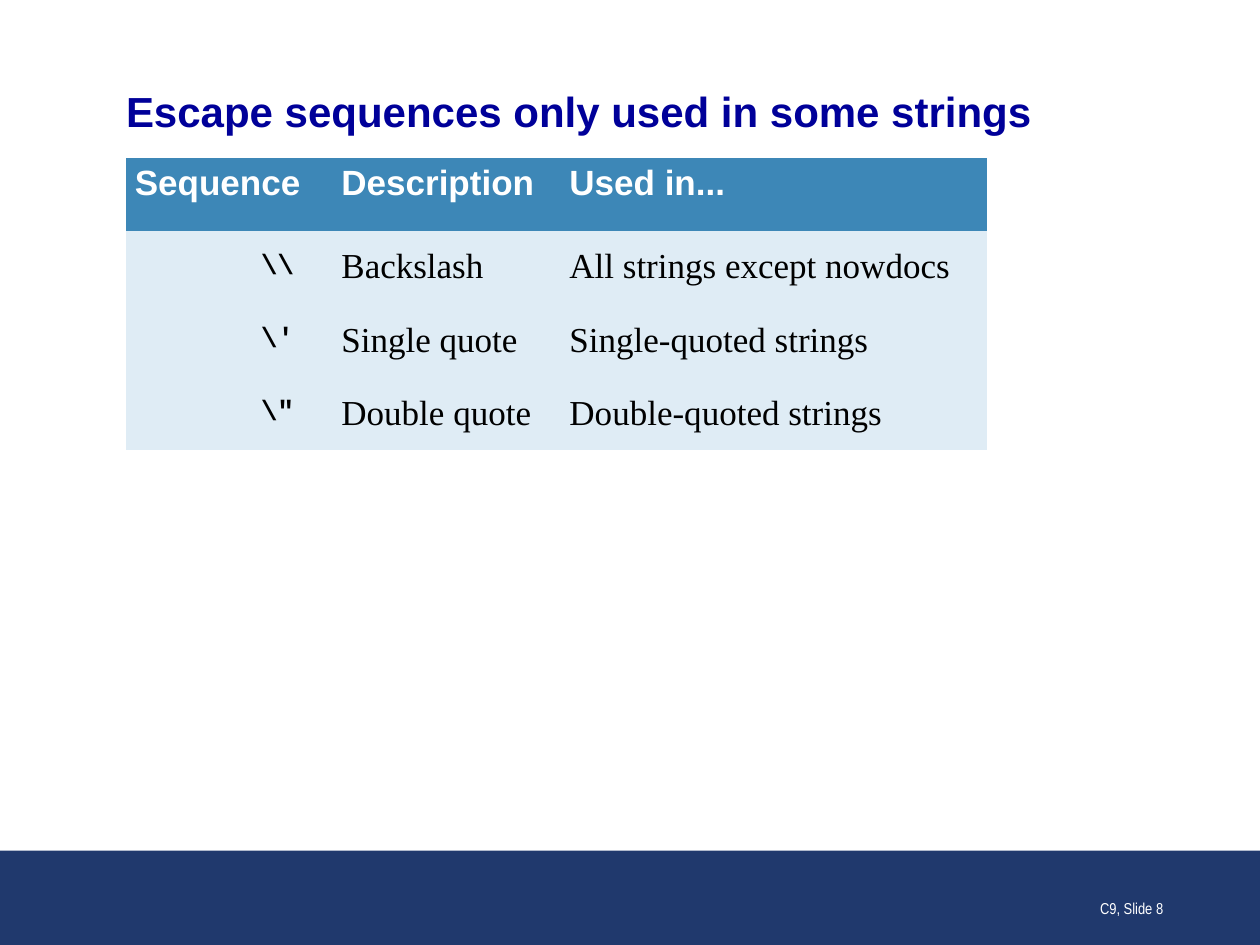
import pptx
import pptx.util
import pptx.dml.color
import pptx.enum.shapes
import pptx.enum.text
from pptx.dml.color import RGBColor
from pptx.util import Inches, Pt

TITLE = "Escape sequences only used in some strings"
HEADINGS = ("Sequence", "Description", "Used in...")
ESCAPES = [
    (r"\\", "Backslash", "All strings except nowdocs"),
    (r"\'", "Single quote", "Single-quoted strings"),
    (r"\"", "Double quote", "Double-quoted strings"),
]
FOOTER = "C9, Slide 8"

COLUMN_WIDTHS = (1.64, 1.81, 3.38)
ROW_HEIGHT = 0.58
SIDE_MARGIN = 0.07
CODE_INDENT = 1

NAVY = RGBColor(0x20, 0x39, 0x6D)
TITLE_BLUE = RGBColor(0x00, 0x00, 0x99)
HEADER_BLUE = RGBColor(0x3D, 0x87, 0xB7)
PALE_BLUE = RGBColor(0xDF, 0xEC, 0xF5)
WHITE = RGBColor(0xFF, 0xFF, 0xFF)
BLACK = RGBColor(0x00, 0x00, 0x00)

HEADER_STYLE = ("Arial", 20, WHITE, True)
CODE_STYLE = ("Courier New", 16, BLACK, True)
BODY_STYLE = ("Times New Roman", 20, BLACK, False)

ANCHOR = pptx.enum.text.MSO_ANCHOR
ALIGN = pptx.enum.text.PP_ALIGN


def add_span(para, text, style):
    span = para.add_run()
    span.text = text
    span.font.name, size, color, span.font.bold = style
    span.font.size = Pt(size)
    span.font.color.rgb = color


def add_footer(slide):
    band = slide.shapes.add_shape(
        pptx.enum.shapes.MSO_SHAPE.RECTANGLE,
        Inches(0), Inches(6.75), Inches(10), Inches(0.75))
    band.shadow.inherit = False
    band.fill.solid()
    band.fill.fore_color.rgb = NAVY
    band.line.fill.background()

    box = slide.shapes.add_textbox(
        Inches(7.25), Inches(6.83), Inches(2.08), Inches(0.5))
    frame = box.text_frame
    frame.word_wrap = True
    frame.vertical_anchor = ANCHOR.BOTTOM
    para = frame.paragraphs[0]
    para.alignment = ALIGN.RIGHT
    add_span(para, FOOTER, ("Arial Narrow", 9, WHITE, False))


def add_title(slide):
    title = slide.shapes.title
    title.left, title.top = Inches(1), Inches(0.68)
    title.width, title.height = Inches(8), Inches(0.4)
    frame = title.text_frame
    frame.word_wrap = True
    frame.auto_size = pptx.enum.text.MSO_AUTO_SIZE.NONE
    frame.vertical_anchor = ANCHOR.MIDDLE
    frame.margin_left = frame.margin_right = 0
    frame.margin_top = frame.margin_bottom = 0
    para = frame.paragraphs[0]
    para.alignment = ALIGN.LEFT
    add_span(para, TITLE, ("Arial", 24, TITLE_BLUE, True))


def add_escape_table(slide):
    rows = [HEADINGS] + ESCAPES
    table = slide.shapes.add_table(
        len(rows), len(HEADINGS), Inches(1), Inches(1.25),
        Inches(sum(COLUMN_WIDTHS)), Inches(ROW_HEIGHT * len(rows))).table
    for column, width in zip(table.columns, COLUMN_WIDTHS):
        column.width = Inches(width)
    for row_index, texts in enumerate(rows):
        table.rows[row_index].height = Inches(ROW_HEIGHT)
        is_header = row_index == 0
        for column_index, text in enumerate(texts):
            is_code = not is_header and column_index == 0
            cell = table.cell(row_index, column_index)
            cell.fill.solid()
            cell.fill.fore_color.rgb = HEADER_BLUE if is_header else PALE_BLUE
            cell.vertical_anchor = ANCHOR.TOP if is_header else ANCHOR.MIDDLE
            indent = CODE_INDENT if is_code else 0
            cell.margin_left = Inches(SIDE_MARGIN + indent)
            cell.margin_right = Inches(SIDE_MARGIN)
            cell.margin_top = cell.margin_bottom = Inches(0.05)
            style = (HEADER_STYLE if is_header
                     else CODE_STYLE if is_code else BODY_STYLE)
            add_span(cell.text_frame.paragraphs[0], text, style)
    # Turn off the style's banding and header rule; every cell has its own fill.
    table.first_row = False
    table.horz_banding = False
    style_id = table._tbl.tblPr.find(pptx.oxml.ns.qn("a:tableStyleId"))
    style_id.text = "{2D5ABB26-0587-4C30-8999-92F81FD0307C}"


def main():
    deck = pptx.Presentation()
    deck.slide_width, deck.slide_height = Inches(10), Inches(7.5)
    slide = deck.slides.add_slide(deck.slide_layouts[5])
    add_footer(slide)
    add_title(slide)
    add_escape_table(slide)
    deck.save("out.pptx")


if __name__ == "__main__":
    main()
